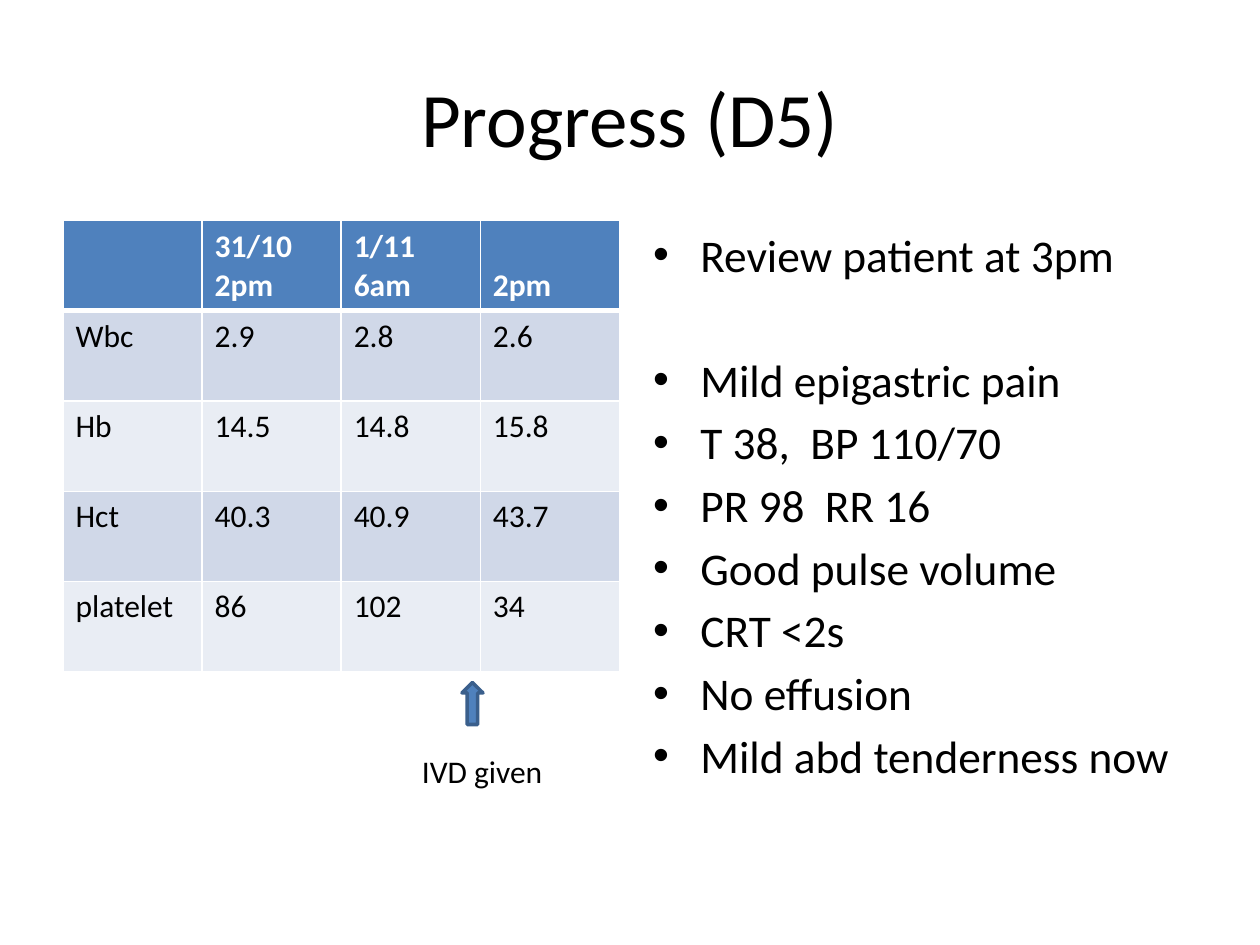
from dataclasses import dataclass

from lxml import etree
from pptx import Presentation
from pptx.dml.color import RGBColor
from pptx.enum import shapes, text
from pptx.oxml import ns
from pptx.util import Pt


@dataclass(frozen=True)
class Theme:
    font: str = "Calibri"
    ink: str = "000000"
    paper: str = "FFFFFF"
    accent: str = "4F81BD"
    outline: str = "3A5F8C"
    bands: tuple = ("D0D8E8", "E9EDF4")
    title_size: float = 44
    body_size: float = 25.9
    label_size: float = 18


@dataclass(frozen=True)
class Frame:
    left: float
    top: float
    width: float
    height: float

    def lengths(self) -> list:
        return [Pt(v) for v in (self.left, self.top, self.width, self.height)]


@dataclass(frozen=True)
class Finding:
    wording: str
    space_before: float = 4.7


THEME = Theme()
TITLE = Frame(36, 21.6, 648, 90)
RESULTS = Frame(36, 126, 318, 258)
FINDINGS = Frame(366, 126, 318, 356.4)
CAPTION = Frame(234, 426, 96, 29)
ARROW = Frame(264, 390, 12, 24)

RESULT_ROWS = [
    ("", "31/10\n2pm", "1/11\n6am", "2pm"),
    ("Wbc", "2.9", "2.8", "2.6"),
    ("Hb", "14.5", "14.8", "15.8"),
    ("Hct", "40.3", "40.9", "43.7"),
    ("platelet", "86", "102", "34"),
]
FINDING_LIST = [
    Finding("Review patient at 3pm"),
    Finding("Mild epigastric pain", space_before=40.4),
    Finding("T 38,  BP 110/70"),
    Finding("PR 98  RR 16"),
    Finding("Good pulse volume"),
    Finding("CRT <2s"),
    Finding("No effusion"),
    Finding("Mild abd tenderness now"),
]


def place(shape, frame: Frame) -> None:
    shape.left, shape.top, shape.width, shape.height = frame.lengths()


def style_text(text_frame, size: float, color: str, bold: bool = False) -> None:
    for para in text_frame.paragraphs:
        for span in para.runs:
            span.font.name = THEME.font
            span.font.size = Pt(size)
            span.font.bold = bold
            span.font.color.rgb = RGBColor.from_string(color)


def border_cell(cell, widths: dict) -> None:
    properties = cell._tc.get_or_add_tcPr()
    for side, width in widths.items():
        line = etree.SubElement(properties, ns.qn(f"a:ln{side}"), w=str(Pt(width)))
        fill = etree.SubElement(line, ns.qn("a:solidFill"))
        etree.SubElement(fill, ns.qn("a:srgbClr"), val=THEME.paper)


def draw_title(page) -> None:
    title = page.shapes.title
    place(title, TITLE)
    title.text_frame.text = "Progress (D5)"
    title.text_frame.vertical_anchor = text.MSO_ANCHOR.MIDDLE
    title.text_frame.paragraphs[0].alignment = text.PP_ALIGN.CENTER
    style_text(title.text_frame, THEME.title_size, THEME.ink)


def draw_results(page, rows: list) -> None:
    table = page.shapes.add_table(len(rows), len(rows[0]), *RESULTS.lengths()).table
    for column in table.columns:
        column.width = Pt(RESULTS.width / len(rows[0]))
    for index, values in enumerate(rows):
        header = index == 0
        table.rows[index].height = Pt(RESULTS.height / len(rows))
        for cell, value in zip(table.rows[index].cells, values):
            cell.text_frame.text = value
            if header:
                cell.vertical_anchor = text.MSO_ANCHOR.BOTTOM
            border_cell(cell, {"L": 1, "R": 1, "T": 3 if index == 1 else 1, "B": 3 if header else 1})
            cell.fill.solid()
            color = THEME.accent if header else THEME.bands[(index - 1) % 2]
            cell.fill.fore_color.rgb = RGBColor.from_string(color)
            style_text(cell.text_frame, THEME.label_size, THEME.paper if header else THEME.ink, header)


def draw_findings(page, findings: list) -> None:
    body = page.placeholders[1]
    place(body, FINDINGS)
    frame = body.text_frame
    frame.text = "\n".join(finding.wording for finding in findings)
    frame.auto_size = text.MSO_AUTO_SIZE.NONE
    for para, finding in zip(frame.paragraphs, findings):
        para.space_before = Pt(finding.space_before)
    style_text(frame, THEME.body_size, THEME.ink)


def draw_caption(page) -> None:
    box = page.shapes.add_textbox(*CAPTION.lengths())
    box.text_frame.word_wrap = True
    box.text_frame.text = "IVD given"
    style_text(box.text_frame, THEME.label_size, THEME.ink)


def draw_arrow(page) -> None:
    arrow = page.shapes.add_shape(shapes.MSO_SHAPE.UP_ARROW, *ARROW.lengths())
    arrow.shadow.inherit = False
    arrow.fill.solid()
    arrow.fill.fore_color.rgb = RGBColor.from_string(THEME.accent)
    arrow.line.color.rgb = RGBColor.from_string(THEME.outline)
    arrow.line.width = Pt(2)


def main() -> None:
    deck = Presentation()
    deck.slide_width, deck.slide_height = Pt(720), Pt(540)
    page = deck.slides.add_slide(deck.slide_layouts[1])
    draw_title(page)
    draw_results(page, RESULT_ROWS)
    draw_findings(page, FINDING_LIST)
    draw_caption(page)
    draw_arrow(page)
    deck.save("out.pptx")


if __name__ == "__main__":
    main()
